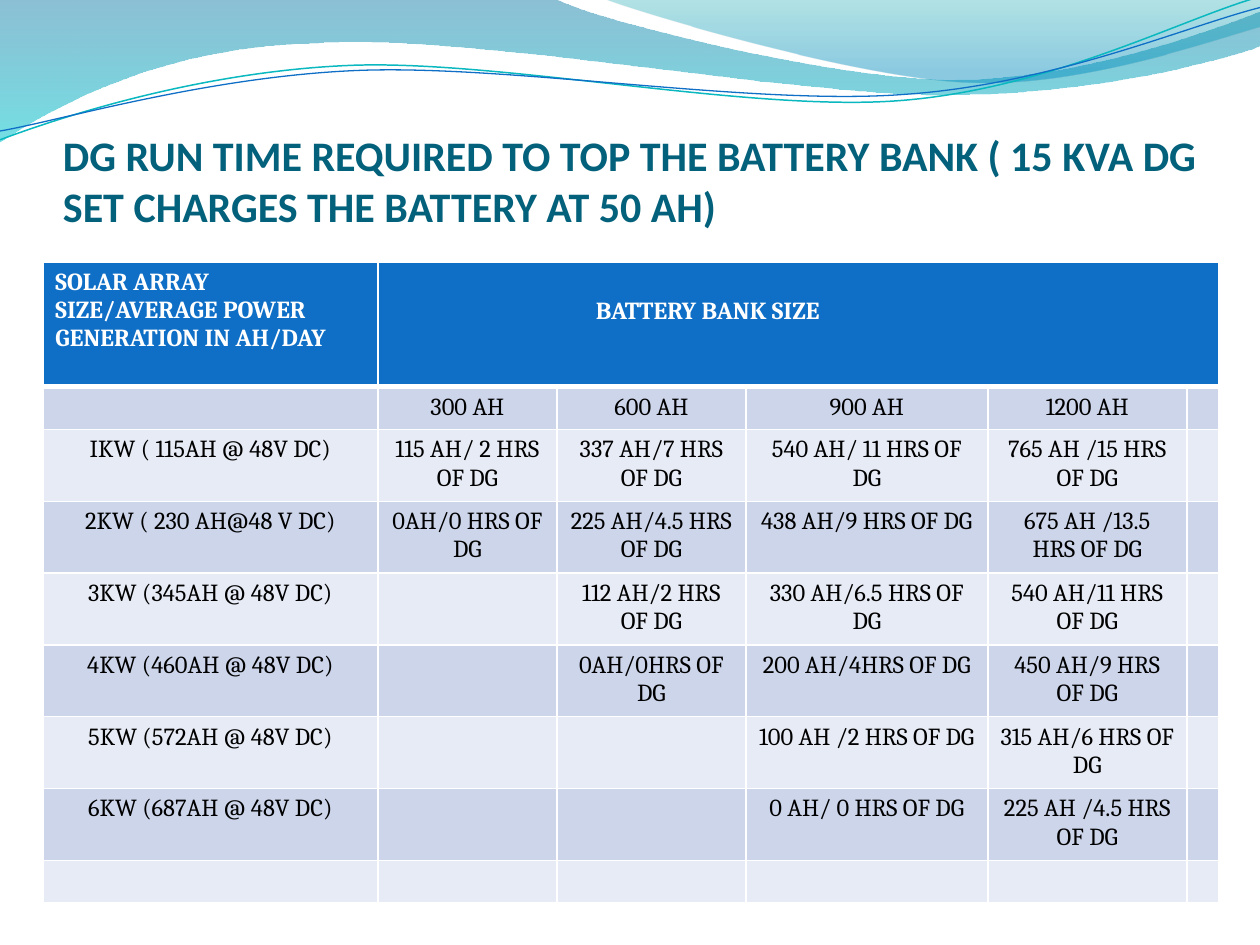
from lxml import etree
from pptx import Presentation
from pptx.dml.color import RGBColor
from pptx.enum.text import MSO_ANCHOR, PP_ALIGN
from pptx.oxml.ns import qn
from pptx.util import Inches, Pt

CENTER = PP_ALIGN.CENTER
BOTTOM = MSO_ANCHOR.BOTTOM

WHITE = RGBColor(0xFF, 0xFF, 0xFF)
BLACK = RGBColor(0x00, 0x00, 0x00)
TITLE_TEAL = RGBColor(0x04, 0x61, 0x7B)
BLUE = RGBColor(0x0F, 0x6F, 0xC6)
TEAL = RGBColor(0x0A, 0xB8, 0xBF)
ROW_DARK = RGBColor(0xCC, 0xD5, 0xEA)
ROW_LIGHT = RGBColor(0xE7, 0xEB, 0xF5)
WIDE_TOP = RGBColor(0x00, 0x74, 0xA1)
WIDE_BOTTOM = RGBColor(0x00, 0xC6, 0xCF)
RIGHT_TOP = RGBColor(0x00, 0xA1, 0xA9)
RIGHT_BOTTOM = RGBColor(0x00, 0x8B, 0xBF)

WIDE_WAVE = [
    [(0, 0)], [(4.4, -0.01)],
    [(4.76, 0.17), (6.64, 0.63), (7.58, 0.63)],
    [(8.53, 0.63), (9.58, 0.26), (10, 0.09)],
    [(10.01, 0.36)],
    [(9.83, 0.44), (8.7, 0.76), (7.46, 0.75)],
    [(6.22, 0.75), (3.82, 0.28), (2.57, 0.34)],
    [(1.29, 0.36), (0.46, 0.83), (-0.01, 1.13)],
]
RIGHT_WAVE = [
    [(4.79, -0.01)],
    [(5.09, 0.11), (6.82, 0.62), (7.69, 0.65)],
    [(8.56, 0.69), (9.61, 0.32), (10, 0.21)],
    [(10, 0)],
]
TEAL_STRAND = [
    [(0, 1.11)],
    [(0.48, 0.93), (1.58, 0.57), (2.77, 0.52)],
    [(3.95, 0.47), (5.93, 0.89), (7.13, 0.8)],
    [(8.33, 0.71), (9.38, 0.15), (9.98, -0.02)],
]
BLUE_STRAND = [
    [(0, 1.04)],
    [(0.47, 0.96), (1.64, 0.61), (2.83, 0.56)],
    [(4.03, 0.51), (5.97, 0.84), (7.17, 0.75)],
    [(8.36, 0.67), (9.41, 0.21), (10, 0.06)],
]

TITLE = ("DG RUN TIME REQUIRED TO TOP THE BATTERY BANK ( 15 KVA DG "
         "SET CHARGES THE BATTERY AT 50 AH)")
ARRAY_HEADER = "SOLAR ARRAY SIZE/AVERAGE POWER GENERATION IN AH/DAY"
BANK_HEADER = "BATTERY BANK SIZE"
RUN_TIMES = [
    ["", "300 AH", "600 AH", "900 AH", "1200 AH", ""],
    ["IKW ( 115AH @ 48V DC)", "115 AH/ 2 HRS OF DG", "337 AH/7 HRS OF DG",
     "540 AH/ 11 HRS OF DG", "765 AH /15 HRS OF DG", ""],
    ["2KW ( 230 AH@48 V DC)", "0AH/0 HRS OF DG", "225 AH/4.5 HRS OF DG",
     "438 AH/9 HRS OF DG", "675 AH /13.5 HRS OF DG", ""],
    ["3KW (345AH @ 48V DC)", "", "112 AH/2 HRS OF DG",
     "330 AH/6.5 HRS OF DG", "540 AH/11 HRS OF DG", ""],
    ["4KW (460AH @ 48V DC)", "", "0AH/0HRS OF DG",
     "200 AH/4HRS OF DG", "450 AH/9 HRS OF DG", ""],
    ["5KW (572AH @ 48V DC)", "", "",
     "100 AH /2 HRS OF DG", "315 AH/6 HRS OF DG", ""],
    ["6KW (687AH @ 48V DC)", "", "",
     "0 AH/ 0 HRS OF DG", "225 AH /4.5 HRS OF DG", ""],
    [""] * 6,
]
COLUMN_WIDTHS = [2.66, 1.42, 1.5, 1.92, 1.58, 0.25]
ROW_HEIGHTS = [0.99, 0.34] + [0.57] * 6 + [0.34]


def bend_segments(outline, segments):
    corners = iter(list(outline._element.spPr.iter(qn("a:lnTo"))))
    for segment in segments[1:]:
        controls = [next(corners) for _ in segment]
        if len(controls) == 3:
            curve = etree.Element(qn("a:cubicBezTo"))
            controls[0].addprevious(curve)
            for control in controls:
                curve.append(control[0])
                control.getparent().remove(control)


def add_outline(slide, left, top, segments, close):
    points = [(left + Inches(x), top + Inches(y))
              for segment in segments for x, y in segment]
    builder = slide.shapes.build_freeform(*points[0])
    builder.add_line_segments(points[1:], close=close)
    outline = builder.convert_to_shape()
    outline.shadow.inherit = False
    bend_segments(outline, segments)
    return outline


def add_wave(slide, left, top, segments, stops):
    wave = add_outline(slide, left, top, segments, True)
    wave.line.fill.background()
    wave.fill.gradient()
    wave.fill.gradient_angle = 270
    for stop, (position, color, _) in zip(wave.fill.gradient_stops, stops):
        stop.position = position
        stop.color.rgb = color
    tints = wave._element.spPr.iter(qn("a:srgbClr"))
    for tint, (_, _, opacity) in zip(tints, stops):
        etree.SubElement(tint, qn("a:alpha"), val=str(opacity * 1000))


def add_strand(slide, left, top, segments, color, weight):
    strand = add_outline(slide, left, top, segments, False)
    strand.fill.background()
    strand.line.color.rgb = color
    strand.line.width = Pt(weight)


def add_wave_header(slide, left, top):
    add_wave(slide, left, top, WIDE_WAVE, [(0, WIDE_TOP, 45), (1, WIDE_BOTTOM, 55)])
    add_wave(slide, left, top, RIGHT_WAVE, [(0, RIGHT_TOP, 30), (0.8, RIGHT_BOTTOM, 45)])
    add_strand(slide, left, top, TEAL_STRAND, TEAL, 0.85)
    add_strand(slide, left, top, BLUE_STRAND, BLUE, 0.75)


def format_runs(paragraph, font_name, size, color, bold):
    for run in paragraph.runs:
        run.font.name = font_name
        run.font.size = Pt(size)
        run.font.bold = bold
        run.font.color.rgb = color


def add_title(slide, left, top, width, height):
    frame = slide.shapes.add_textbox(left, top, width, height).text_frame
    frame.word_wrap = True
    frame.vertical_anchor = BOTTOM
    frame.margin_left = frame.margin_right = frame.margin_bottom = 0
    frame.margin_top = Inches(0.05)
    frame.text = TITLE
    format_runs(frame.paragraphs[0], "Calibri", 24, TITLE_TEAL, True)


def set_borders(cell, top_weight, bottom_weight):
    properties = cell._tc.get_or_add_tcPr()
    for side, weight in (("L", 1), ("R", 1), ("T", top_weight), ("B", bottom_weight)):
        border = etree.SubElement(properties, qn(f"a:ln{side}"), w=str(Pt(weight)))
        fill = etree.SubElement(border, qn("a:solidFill"))
        etree.SubElement(fill, qn("a:srgbClr"), val=str(WHITE))


def fill_cell(cell, text, background, color, bold):
    cell.fill.solid()
    cell.fill.fore_color.rgb = background
    cell.text_frame.text = text
    paragraph = cell.text_frame.paragraphs[0]
    format_runs(paragraph, "Cambria", 14, color, bold)
    if not text:
        etree.SubElement(paragraph._p, qn("a:endParaRPr"), sz="1400")
    return paragraph


def add_run_time_table(slide, left, top, width, height):
    table = slide.shapes.add_table(len(ROW_HEIGHTS), len(COLUMN_WIDTHS),
                                   left, top, width, height).table
    for column, column_width in zip(table.columns, COLUMN_WIDTHS):
        column.width = Inches(column_width)
    for row, row_height in zip(table.rows, ROW_HEIGHTS):
        row.height = Inches(row_height)

    headers = [ARRAY_HEADER, BANK_HEADER, "", "", "", ""]
    for row_index, texts in enumerate([headers, *RUN_TIMES]):
        is_header = row_index == 0
        background = BLUE if is_header else ROW_DARK if row_index % 2 else ROW_LIGHT
        for column_index, text in enumerate(texts):
            cell = table.cell(row_index, column_index)
            set_borders(cell, 3 if row_index == 1 else 1, 3 if is_header else 1)
            paragraph = fill_cell(cell, text, background,
                                  WHITE if is_header else BLACK, is_header)
            if text and not is_header:
                paragraph.alignment = CENTER

    bank_header = table.cell(0, 1)
    bank_header.merge(table.cell(0, len(COLUMN_WIDTHS) - 1))
    bank_header.margin_left = Inches(1.73)
    bank_header.margin_top = Inches(0.28)


def main():
    presentation = Presentation()
    presentation.slide_width = Inches(10)
    presentation.slide_height = Inches(7.5)
    slide = presentation.slides.add_slide(presentation.slide_layouts[6])
    add_wave_header(slide, Inches(0), Inches(0))
    add_title(slide, Inches(0.5), Inches(0.91), Inches(9), Inches(0.92))
    add_run_time_table(slide, Inches(0.34), Inches(2.08), Inches(9.33), Inches(5.08))
    presentation.save("out.pptx")


if __name__ == "__main__":
    main()
